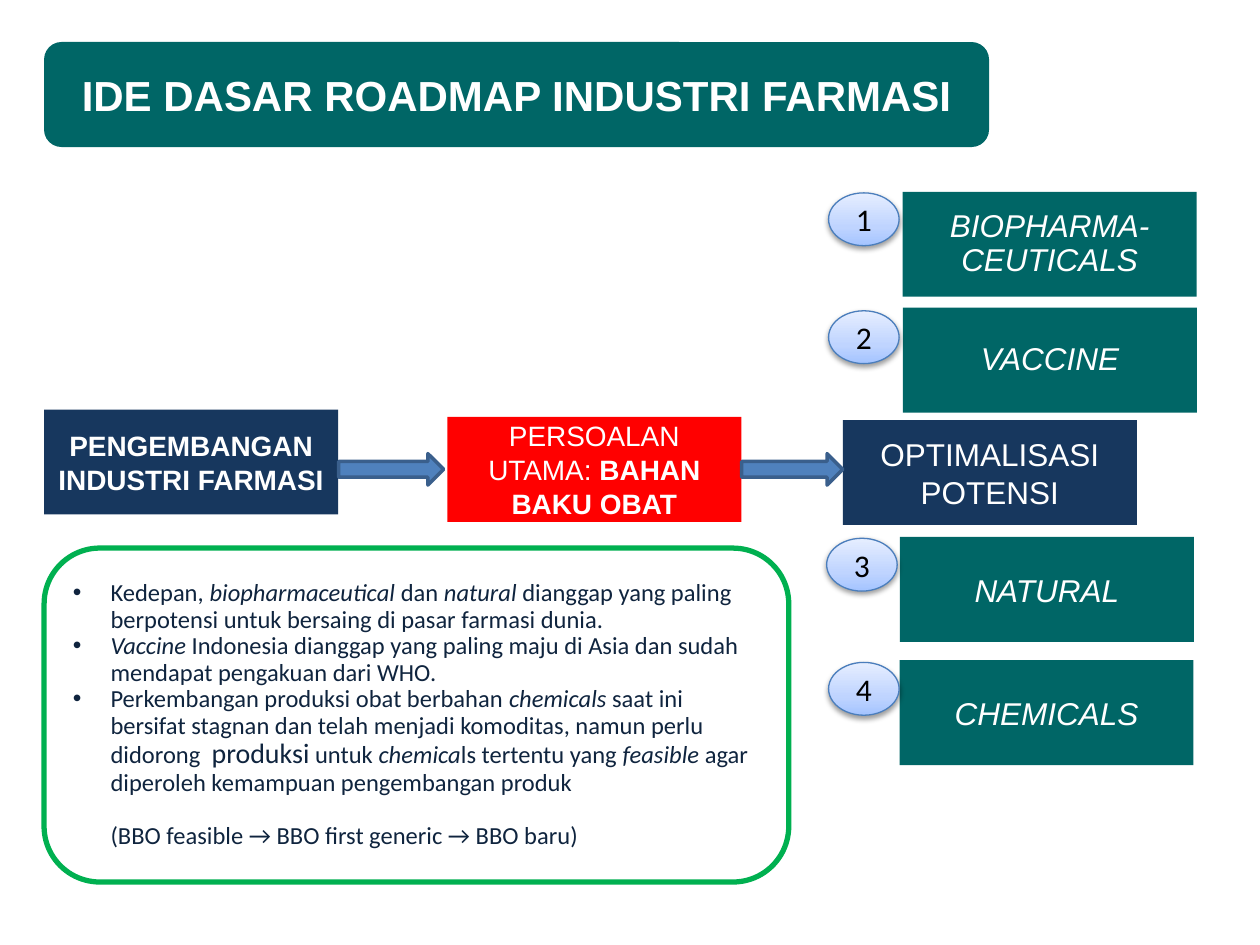
import copy
from dataclasses import dataclass

import lxml.etree
import pptx
import pptx.dml.color
import pptx.enum.shapes
import pptx.enum.text
import pptx.oxml
import pptx.oxml.ns
import pptx.util

Pt = pptx.util.Pt
RGB = pptx.dml.color.RGBColor
Shape = pptx.enum.shapes.MSO_SHAPE
Align = pptx.enum.text.PP_ALIGN
qn = pptx.oxml.ns.qn

WHITE = RGB(0xFF, 0xFF, 0xFF)
BLACK = RGB(0x00, 0x00, 0x00)
TEAL = RGB(0x00, 0x66, 0x66)
NAVY = RGB(0x17, 0x37, 0x5E)
RED = RGB(0xFF, 0x00, 0x00)
GREEN = RGB(0x00, 0xB0, 0x50)
INK = RGB(0x0F, 0x24, 0x3E)
ARROW_FILL = RGB(0x4F, 0x81, 0xBD)
ARROW_EDGE = RGB(0x3A, 0x5F, 0x8C)
BADGE_EDGE = RGB(0x4B, 0x7E, 0xBC)
BADGE_STOPS = ((0, RGB(0xA4, 0xC4, 0xFF)), (0.35, RGB(0xBF, 0xD4, 0xFF)),
               (1, RGB(0xE6, 0xEE, 0xFF)))

BOX_WIDTH, BOX_HEIGHT = 168, 60
BADGE_WIDTH, BADGE_HEIGHT = 40.3, 30.2
MARGIN = 25.2
NOTE_INDENT = 21.6


@dataclass(frozen=True)
class Run:
    text: str
    bold: bool = False
    italic: bool = False
    size: float | None = None


@dataclass(frozen=True)
class Stage:
    left: float
    top: float
    fill: RGB
    runs: list[Run]
    size: float


@dataclass(frozen=True)
class Potential:
    name: str
    left: float
    top: float
    badge_left: float
    badge_top: float
    line_spacing: float | None = None


@dataclass(frozen=True)
class Arrow:
    left: float
    width: float


STAGES = [
    Stage(MARGIN, 234, NAVY, [Run("PENGEMBANGAN INDUSTRI FARMASI", bold=True)], 16),
    Stage(255.6, 238.2, RED,
          [Run("PERSOALAN UTAMA: "), Run("BAHAN BAKU OBAT", bold=True)], 16),
    Stage(481.6, 240, NAVY, [Run("OPTIMALISASI POTENSI")], 18),
]
ARROWS = [Arrow(193.5, 60), Arrow(423.8, 57.8)]
POTENTIALS = [
    Potential("BIOPHARMA-CEUTICALS", 515.8, 109.6, 473.5, 110.2, 0.9),
    Potential("VACCINE", 516, 175.8, 473.5, 177.6, 0.9),
    Potential("NATURAL", 514.2, 306.8, 472.4, 307.6),
    Potential("CHEMICALS", 514, 377.2, 473.5, 378.5),
]
NOTES = [
    [Run("Kedepan, "), Run("biopharmaceutical", italic=True), Run(" dan "),
     Run("natural", italic=True),
     Run(" dianggap yang paling berpotensi untuk bersaing di pasar farmasi dunia.")],
    [Run("Vaccine", italic=True),
     Run(" Indonesia dianggap yang paling maju di Asia dan sudah mendapat "
         "pengakuan dari WHO.")],
    [Run("Perkembangan produksi obat berbahan "), Run("chemicals", italic=True),
     Run(" saat ini bersifat stagnan dan telah menjadi komoditas, namun perlu didorong  "),
     Run("produksi", size=16), Run(" untuk "), Run("chemica", italic=True),
     Run("ls tertentu yang "), Run("feasible ", italic=True),
     Run("agar diperoleh kemampuan pengembangan produk")],
]
CONCLUSION = [Run("(BBO feasible → BBO first generic → BBO baru)")]


def add_block(slide, kind, left, top, width, height, fill=None, edge=None, edge_width=0.75):
    block = slide.shapes.add_shape(kind, Pt(left), Pt(top), Pt(width), Pt(height))
    block.shadow.inherit = False
    if fill is None:
        block.fill.background()
    else:
        block.fill.solid()
        block.fill.fore_color.rgb = fill
    if edge is None:
        block.line.fill.background()
    else:
        block.line.color.rgb = edge
        block.line.width = Pt(edge_width)
    return block


def write(block, runs: list[Run], *, size: float, color: RGB = WHITE, font: str = "Arial",
          align=Align.CENTER, line_spacing: float | None = None, indent: float = 0,
          bullet: bool = False, space_before: float | None = None) -> None:
    """Write one paragraph, after any text the block already holds."""
    frame = block.text_frame
    frame.word_wrap = True
    frame.vertical_anchor = pptx.enum.text.MSO_ANCHOR.MIDDLE
    paragraph = frame.add_paragraph() if frame.text else frame.paragraphs[0]
    paragraph.alignment = align
    paragraph.line_spacing = line_spacing
    if space_before is not None:
        paragraph.space_before = Pt(space_before)
    properties = paragraph._p.get_or_add_pPr()
    if indent:
        properties.set("marL", str(Pt(indent)))
        properties.set("indent", str(Pt(-indent) if bullet else 0))
    if bullet:
        lxml.etree.SubElement(properties, qn("a:buFont"), typeface="Arial")
        lxml.etree.SubElement(properties, qn("a:buChar"), char="•")
    for part in runs:
        run = paragraph.add_run()
        run.text = part.text
        run.font.name = font
        run.font.size = Pt(part.size or size)
        run.font.bold = part.bold
        run.font.italic = part.italic
        run.font.color.rgb = color


def add_badge(slide, number: int, left: float, top: float) -> None:
    """Add a numbered oval with a three-stop gradient and a soft shadow."""
    badge = add_block(slide, Shape.OVAL, left, top, BADGE_WIDTH, BADGE_HEIGHT,
                      edge=BADGE_EDGE)
    badge.fill.gradient()
    badge.fill.gradient_angle = 90
    properties = badge._element.spPr
    stop_list = properties.find(qn("a:gradFill")).find(qn("a:gsLst"))
    stop_list.append(copy.deepcopy(stop_list[0]))
    for stop, (position, color) in zip(badge.fill.gradient_stops, BADGE_STOPS):
        stop.position = position
        stop.color.rgb = color
    shadow = lxml.etree.SubElement(
        properties.find(qn("a:effectLst")), qn("a:outerShdw"), blurRad=str(Pt(3.1)),
        dist=str(Pt(1.6)), dir="5400000", rotWithShape="0")
    shadow_color = lxml.etree.SubElement(shadow, qn("a:srgbClr"), val=str(BLACK))
    lxml.etree.SubElement(shadow_color, qn("a:alpha"), val="38000")
    write(badge, [Run(str(number))], size=18, color=BLACK, font="Calibri")


def add_notes(slide) -> None:
    panel = add_block(slide, Shape.ROUNDED_RECTANGLE, MARGIN, 313.2, 425.5, 190.8,
                      edge=GREEN, edge_width=3)
    style = dict(size=14, color=INK, font="Calibri", align=Align.LEFT,
                 line_spacing=0.9, indent=NOTE_INDENT)
    for note in NOTES:
        write(panel, note, bullet=True, **style)
    write(panel, CONCLUSION, space_before=15.2, **style)


def main() -> None:
    deck = pptx.Presentation()
    deck.slide_width, deck.slide_height = Pt(720), Pt(540)
    slide = deck.slides.add_slide(deck.slide_layouts[6])

    for stage in STAGES:
        box = add_block(slide, Shape.RECTANGLE, stage.left, stage.top,
                        BOX_WIDTH, BOX_HEIGHT, stage.fill)
        write(box, stage.runs, size=stage.size)
    for arrow in ARROWS:
        add_block(slide, Shape.RIGHT_ARROW, arrow.left, 259.2, arrow.width, 18,
                  ARROW_FILL, ARROW_EDGE, 2)
    for potential in POTENTIALS:
        box = add_block(slide, Shape.RECTANGLE, potential.left, potential.top,
                        BOX_WIDTH, BOX_HEIGHT, TEAL)
        write(box, [Run(potential.name, italic=True)], size=18,
              line_spacing=potential.line_spacing)

    title = add_block(slide, Shape.ROUNDED_RECTANGLE, MARGIN, 24, 540, 60, TEAL)
    write(title, [Run("IDE DASAR ROADMAP INDUSTRI FARMASI", bold=True)], size=24)
    add_notes(slide)
    for number, potential in enumerate(POTENTIALS, start=1):
        add_badge(slide, number, potential.badge_left, potential.badge_top)

    deck.save("out.pptx")


if __name__ == "__main__":
    main()
